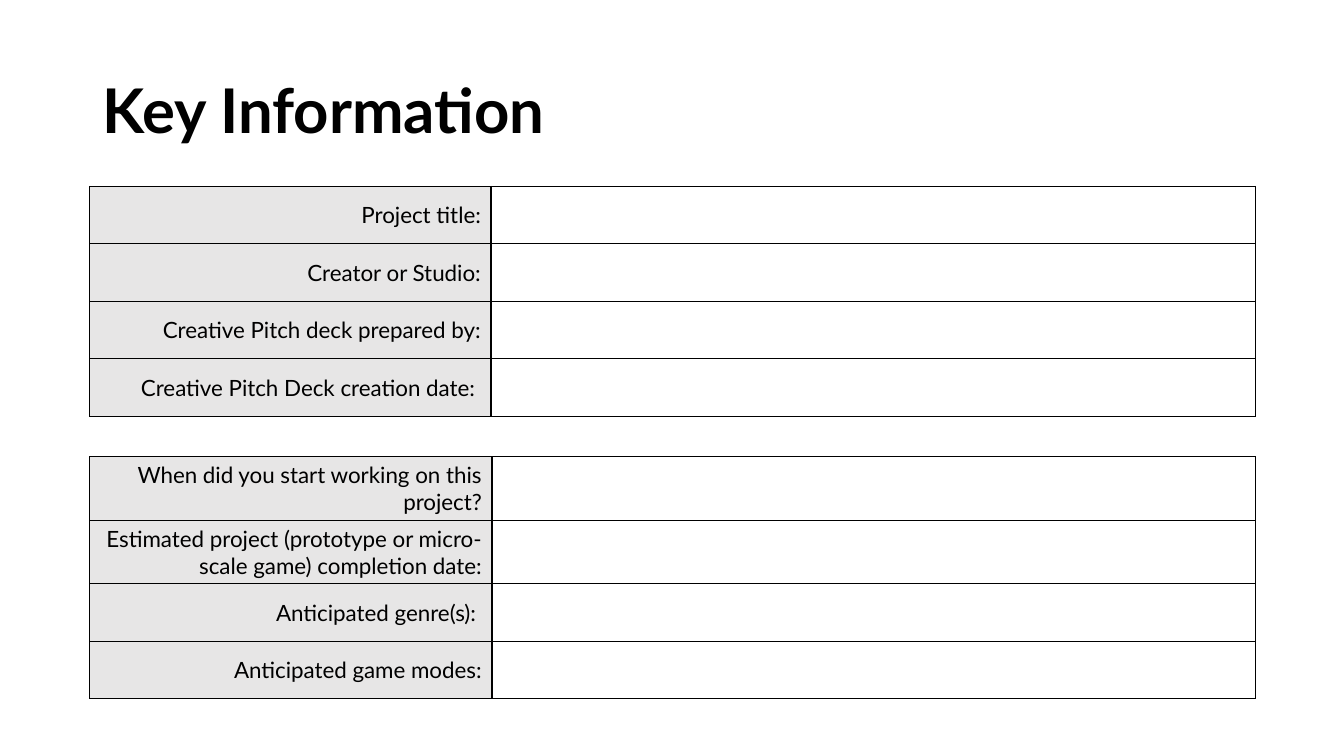
from lxml import etree
from pptx import Presentation
from pptx.dml.color import RGBColor
from pptx.enum import text
from pptx.oxml import ns
from pptx.util import Inches, Pt

COLORS = {"ink": "000000", "label": "E7E6E6"}
FONT = "Lato"
ROW_HEIGHT = 0.57
PROJECT_LABELS = [
    "Project title:",
    "Creator or Studio:",
    "Creative Pitch deck prepared by:",
    "Creative Pitch Deck creation date: ",
]
SCHEDULE_LABELS = [
    "When did you start working on this project?",
    "Estimated project (prototype or micro-scale game) completion date:",
    "Anticipated genre(s): ",
    "Anticipated game modes:",
]


def rgb(name):
    return RGBColor.from_string(COLORS[name])


def style_paragraph(p, size, bold=False):
    for r in p.runs:
        r.font.name = FONT
        r.font.size = Pt(size)
        r.font.bold = bold
        r.font.color.rgb = rgb("ink")


def add_borders(cell):
    """Draw a 1 pt line on all four sides; the lines must precede the fill."""
    tc_pr = cell._tc.get_or_add_tcPr()
    for i, side in enumerate(("lnL", "lnR", "lnT", "lnB")):
        ln = etree.Element(ns.qn(f"a:{side}"), w=str(Pt(1)))
        fill = etree.SubElement(ln, ns.qn("a:solidFill"))
        etree.SubElement(fill, ns.qn("a:srgbClr"), val=COLORS["ink"])
        tc_pr.insert(i, ln)


def add_title(s, left, top, width, height, title):
    box = s.shapes.add_textbox(Inches(left), Inches(top), Inches(width), Inches(height))
    tf = box.text_frame
    tf.word_wrap = True
    tf.vertical_anchor = text.MSO_ANCHOR.MIDDLE
    tf.text = title
    p = tf.paragraphs[0]
    p.line_spacing = 0.9
    style_paragraph(p, 44, bold=True)


def add_form(s, left, top, width, label_width, labels):
    """Add a table of shaded labels, each beside an empty answer cell."""
    frame = s.shapes.add_table(len(labels), 2, Inches(left), Inches(top),
                               Inches(width), Inches(ROW_HEIGHT * len(labels)))
    table = frame.table
    table.first_row = table.horz_banding = False
    table.columns[0].width = Inches(label_width)
    table.columns[1].width = Inches(width - label_width)
    for row, label in zip(table.rows, labels):
        label_cell, answer_cell = row.cells
        label_cell.text_frame.text = label
        label_cell.vertical_anchor = text.MSO_ANCHOR.MIDDLE
        p = label_cell.text_frame.paragraphs[0]
        p.alignment = text.PP_ALIGN.RIGHT
        style_paragraph(p, 16)
        label_cell.fill.solid()
        label_cell.fill.fore_color.rgb = rgb("label")
        answer_cell.fill.background()
        for cell in row.cells:
            add_borders(cell)


def main():
    prs = Presentation()
    prs.slide_width, prs.slide_height = Inches(13.33), Inches(7.5)
    s = prs.slides.add_slide(prs.slide_layouts[6])
    add_form(s, 0.89, 4.53, 11.56, 3.99, SCHEDULE_LABELS)
    add_form(s, 0.89, 1.85, 11.56, 3.98, PROJECT_LABELS)
    add_title(s, 0.92, 0.4, 11.5, 1.45, "Key Information")
    prs.save("out.pptx")


if __name__ == "__main__":
    main()
